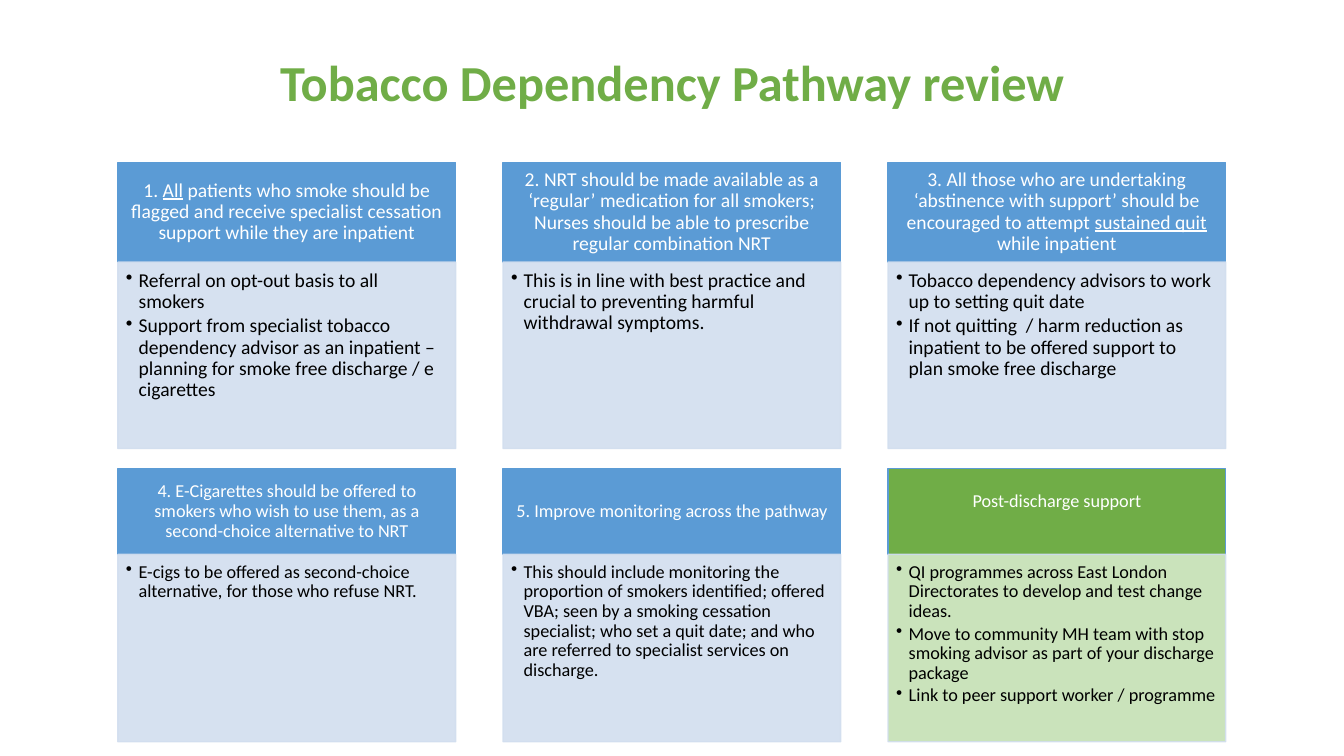
from dataclasses import dataclass

from lxml.etree import SubElement
from pptx import Presentation
from pptx.dml.color import RGBColor
from pptx.enum.shapes import MSO_SHAPE
from pptx.enum.text import MSO_ANCHOR, MSO_AUTO_SIZE, PP_ALIGN
from pptx.oxml.ns import qn
from pptx.shapes.autoshape import Shape
from pptx.slide import Slide
from pptx.text.text import _Paragraph as Paragraph
from pptx.util import Pt

BLUE = RGBColor(0x5B, 0x9B, 0xD5)
PALE_BLUE = RGBColor(0xD2, 0xDE, 0xEF)
GREEN = RGBColor(0x70, 0xAD, 0x47)
PALE_GREEN = RGBColor(0xC5, 0xE0, 0xB4)
WHITE = RGBColor(0xFF, 0xFF, 0xFF)
BLACK = RGBColor(0x00, 0x00, 0x00)

FONT = "Calibri"
LINE_SPACING = 0.9
BODY_OPACITY = 90
CARD_LEFT, CARD_WIDTH, CARD_PITCH = 84.24, 241.2, 275.04
BULLET_INDENT = 9


@dataclass(frozen=True)
class Card:
    header: str
    bullets: tuple[str, ...]
    underlined: str = ""
    header_fill: RGBColor = BLUE
    body_fill: RGBColor = PALE_BLUE
    header_lift: float = 0


@dataclass(frozen=True)
class CardRow:
    top: float
    header_height: float
    body_height: float
    font_size: float
    bullet_gap: float
    side_inset: float
    cards: tuple[Card, ...]


ROWS = (
    CardRow(115.92, 71.28, 133.2, 14, 2.5, 7.7, (
        Card("1. All patients who smoke should be flagged and receive specialist "
             "cessation support while they are inpatient",
             ("Referral on opt-out basis to all smokers",
              "Support from specialist tobacco dependency advisor as an inpatient "
              "–planning for smoke free discharge / e cigarettes"),
             underlined="All"),
        Card("2. NRT should be made available as a ‘regular’ medication for all "
             "smokers; Nurses should be able to prescribe regular combination NRT",
             ("This is in line with best practice and crucial to preventing harmful "
              "withdrawal symptoms.",)),
        Card("3. All those who are undertaking ‘abstinence with support’ should be "
             "encouraged to attempt sustained quit while inpatient",
             ("Tobacco dependency advisors to work up to setting quit date",
              "If not quitting  / harm reduction as inpatient to be offered support "
              "to plan smoke free discharge"),
             underlined="sustained quit"),
    )),
    CardRow(334.8, 61.2, 133.92, 13, 2, 7.2, (
        Card("4. E-Cigarettes should be offered to smokers who wish to use them, "
             "as a second-choice alternative to NRT",
             ("E-cigs to be offered as second-choice alternative, for those who "
              "refuse NRT.",)),
        Card("5. Improve monitoring across the pathway",
             ("This should include monitoring the proportion of smokers identified; "
              "offered VBA; seen by a smoking cessation specialist; who set a quit "
              "date; and who are referred to specialist services on discharge.",)),
        Card("Post-discharge support",
             ("QI programmes across East London Directorates to develop and test "
              "change ideas.",
              "Move to community MH team with stop smoking advisor as part of your "
              "discharge package",
              "Link to peer support worker / programme"),
             header_fill=GREEN, body_fill=PALE_GREEN, header_lift=14.3),
    )),
)


def format_paragraph(paragraph: Paragraph, size: float, color: RGBColor,
                     alignment: PP_ALIGN, bold: bool = False) -> None:
    paragraph.alignment = alignment
    paragraph.line_spacing = LINE_SPACING
    for run in paragraph.runs:
        run.font.name = FONT
        run.font.size = Pt(size)
        run.font.bold = bold
        run.font.color.rgb = color


def set_insets(shape: Shape, left: float, top: float, right: float, bottom: float) -> None:
    frame = shape.text_frame
    frame.margin_left, frame.margin_top = Pt(left), Pt(top)
    frame.margin_right, frame.margin_bottom = Pt(right), Pt(bottom)


def add_box(slide: Slide, left: float, top: float, height: float,
            fill: RGBColor, line: RGBColor) -> Shape:
    box = slide.shapes.add_shape(
        MSO_SHAPE.RECTANGLE, Pt(left), Pt(top), Pt(CARD_WIDTH), Pt(height))
    box.shadow.inherit = False
    box.fill.solid()
    box.fill.fore_color.rgb = fill
    box.line.color.rgb = line
    box.line.width = Pt(1)
    box.text_frame.word_wrap = True
    return box


def set_opacity(shape: Shape, percent: int) -> None:
    for color in shape.element.spPr.iter(qn("a:srgbClr")):
        SubElement(color, qn("a:alpha"), val=str(percent * 1000))


def add_bullet(paragraph: Paragraph) -> None:
    properties = paragraph._p.get_or_add_pPr()
    properties.set("marL", str(Pt(BULLET_INDENT)))
    properties.set("indent", str(-Pt(BULLET_INDENT)))
    SubElement(properties, qn("a:buChar"), char="•")


def draw_header(slide: Slide, card: Card, row: CardRow, left: float) -> None:
    box = add_box(slide, left, row.top, row.header_height, card.header_fill, BLUE)
    set_insets(box, row.side_inset, 4.3, row.side_inset, 4.3 + card.header_lift)
    box.text_frame.vertical_anchor = MSO_ANCHOR.MIDDLE
    paragraph = box.text_frame.paragraphs[0]
    parts = card.header.partition(card.underlined) if card.underlined else (card.header,)
    for part in parts:
        run = paragraph.add_run()
        run.text = part
        run.font.underline = part == card.underlined
    format_paragraph(paragraph, row.font_size, WHITE, PP_ALIGN.CENTER)


def draw_body(slide: Slide, card: Card, row: CardRow, left: float) -> None:
    box = add_box(slide, left, row.top + row.header_height, row.body_height,
                  card.body_fill, PALE_BLUE)
    set_opacity(box, BODY_OPACITY)
    set_insets(box, 5.76, 5.76, row.side_inset, 8.3)
    box.text_frame.vertical_anchor = MSO_ANCHOR.TOP
    box.text_frame.text = "\n".join(card.bullets)
    for paragraph in box.text_frame.paragraphs:
        format_paragraph(paragraph, row.font_size, BLACK, PP_ALIGN.LEFT)
        paragraph.space_after = Pt(row.bullet_gap)
        add_bullet(paragraph)


def draw_title(slide: Slide) -> None:
    title = slide.shapes.title
    title.left, title.top, title.width, title.height = Pt(66.24), Pt(8.64), Pt(828), Pt(104.4)
    frame = title.text_frame
    frame.text = "Tobacco Dependency Pathway review"
    frame.auto_size = MSO_AUTO_SIZE.NONE
    frame.vertical_anchor = MSO_ANCHOR.MIDDLE
    format_paragraph(frame.paragraphs[0], 36, GREEN, PP_ALIGN.CENTER, bold=True)


def main() -> None:
    presentation = Presentation()
    presentation.slide_width, presentation.slide_height = Pt(960), Pt(540)
    slide = presentation.slides.add_slide(presentation.slide_layouts.get_by_name("Title Only"))
    draw_title(slide)
    # Two rows of cards, each a header over a bulleted body
    for row in ROWS:
        for column, card in enumerate(row.cards):
            left = CARD_LEFT + column * CARD_PITCH
            draw_header(slide, card, row, left)
            draw_body(slide, card, row, left)
    presentation.save("out.pptx")


if __name__ == "__main__":
    main()
